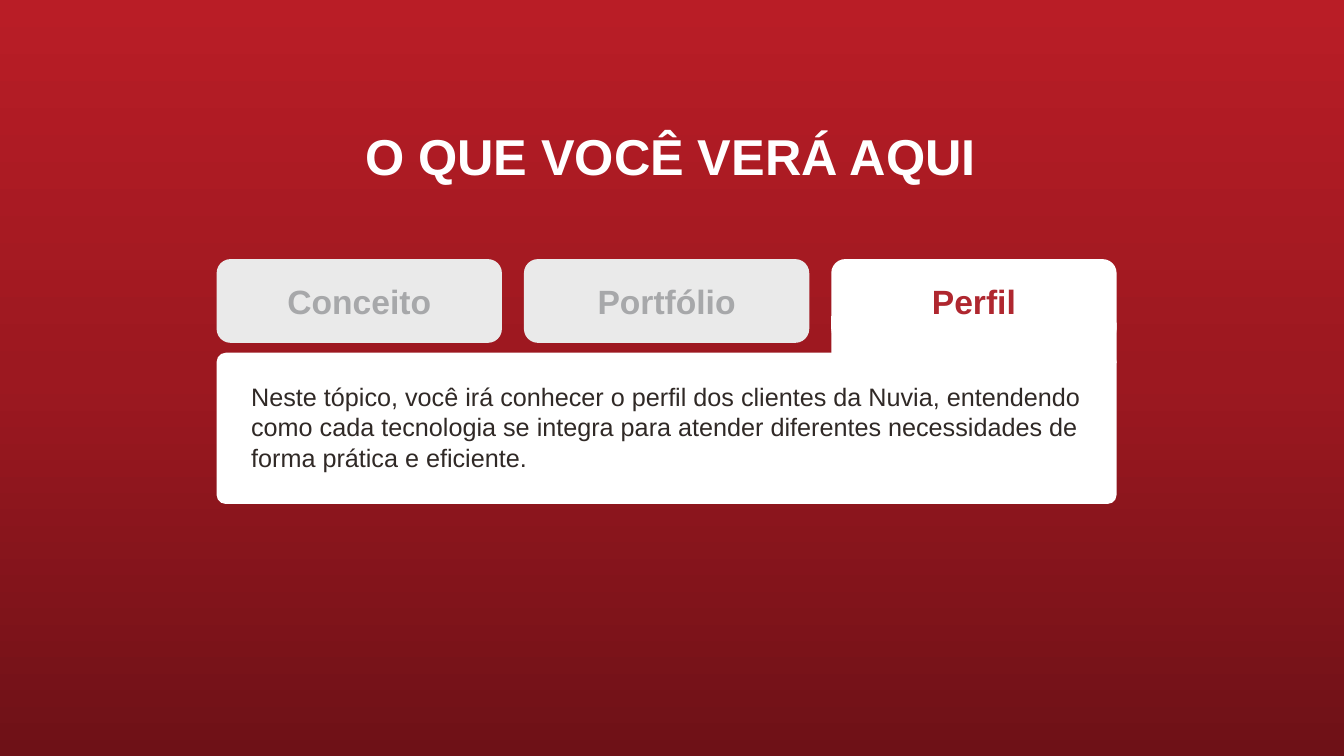
import copy
from dataclasses import dataclass

import pptx
import pptx.dml.color
import pptx.enum.shapes
import pptx.enum.text
import pptx.oxml.ns
import pptx.util

Cm = pptx.util.Cm
SHAPE = pptx.enum.shapes.MSO_SHAPE
ALIGN = pptx.enum.text.PP_ALIGN
ANCHOR = pptx.enum.text.MSO_ANCHOR


@dataclass(frozen=True)
class Theme:
    font: str = "Arial"
    gradient: tuple = ((0, "6E1117"), (0.5, "9C1820"), (1, "B91D26"))
    white: str = "FFFFFF"
    accent: str = "AF272F"
    tab: str = "EAEAEA"
    tab_text: str = "A7A8AA"
    body_text: str = "302926"
    title_size: int = 36
    tab_size: int = 24
    body_size: int = 18


THEME = Theme()
TABS = ("Conceito", "Portfólio", "Perfil")
ACTIVE_TAB = "Perfil"
SUMMARY = (
    "Neste tópico, você irá conhecer o perfil dos clientes da Nuvia, "
    "entendendo como cada tecnologia se integra para atender diferentes "
    "necessidades de forma prática e eficiente."
)


def rgb(value):
    return pptx.dml.color.RGBColor.from_string(value)


def write(tf, text, size, color, bold=False, align=ALIGN.LEFT, anchor=ANCHOR.TOP):
    tf.text = text
    tf.word_wrap = True
    tf.auto_size = pptx.enum.text.MSO_AUTO_SIZE.NONE
    tf.vertical_anchor = anchor
    p = tf.paragraphs[0]
    p.alignment = align
    font = p.runs[0].font
    font.name = THEME.font
    font.size = pptx.util.Pt(size)
    font.bold = bold
    font.color.rgb = rgb(color)


def add_block(slide, kind, left, top, width, height, color):
    sp = slide.shapes.add_shape(kind, Cm(left), Cm(top), Cm(width), Cm(height))
    sp.shadow.inherit = False
    sp.fill.solid()
    sp.fill.fore_color.rgb = rgb(color)
    sp.line.fill.background()
    return sp


def paint_background(slide):
    fill = slide.background.fill
    fill.gradient()
    fill.gradient_angle = 90
    first = slide.element.find(".//" + pptx.oxml.ns.qn("a:gs"))
    first.addnext(copy.deepcopy(first))
    for stop, (position, color) in zip(fill.gradient_stops, THEME.gradient):
        stop.position = position
        stop.color.rgb = rgb(color)


def place_title(slide, left, top, width, height):
    title = slide.shapes.title
    title.left, title.top = Cm(left), Cm(top)
    title.width, title.height = Cm(width), Cm(height)
    write(title.text_frame, "O QUE VOCÊ VERÁ AQUI", THEME.title_size,
          THEME.white, True, ALIGN.CENTER, ANCHOR.MIDDLE)


def add_tabbed_panel(slide, left, top, width, height):
    tab_width, tab_height, panel_offset = 7.19, 2.11, 2.36
    pitch = (width - tab_width) / (len(TABS) - 1)
    panel_top = top + panel_offset
    panel_height = height - panel_offset

    panel = add_block(slide, SHAPE.ROUNDED_RECTANGLE, left, panel_top,
                      width, panel_height, THEME.white)
    panel.adjustments[0] = 0.06

    for i, label in enumerate(TABS):
        active = label == ACTIVE_TAB
        tab_left = left + i * pitch
        if active:
            add_block(slide, SHAPE.RECTANGLE, tab_left, top + 1.6,
                      tab_width, 1.02, THEME.white)
        tab = add_block(slide, SHAPE.FLOWCHART_ALTERNATE_PROCESS, tab_left, top,
                        tab_width, tab_height, THEME.white if active else THEME.tab)
        write(tab.text_frame, label, THEME.tab_size,
              THEME.accent if active else THEME.tab_text,
              True, ALIGN.CENTER, ANCHOR.MIDDLE)

    margin_x, margin_y = 0.62, 0.6
    summary = slide.shapes.add_textbox(
        Cm(left + margin_x), Cm(panel_top + margin_y),
        Cm(width - 2 * margin_x), Cm(panel_height - 2 * margin_y))
    write(summary.text_frame, SUMMARY, THEME.body_size, THEME.body_text)


def main():
    prs = pptx.Presentation()
    prs.slide_width, prs.slide_height = Cm(33.87), Cm(19.05)
    slide = prs.slides.add_slide(prs.slide_layouts.get_by_name("Title Only"))
    paint_background(slide)
    place_title(slide, 7.85, 3.02, 18.11, 1.8)
    add_tabbed_panel(slide, 5.46, 6.53, 22.68, 6.17)
    prs.save("out.pptx")


if __name__ == "__main__":
    main()
